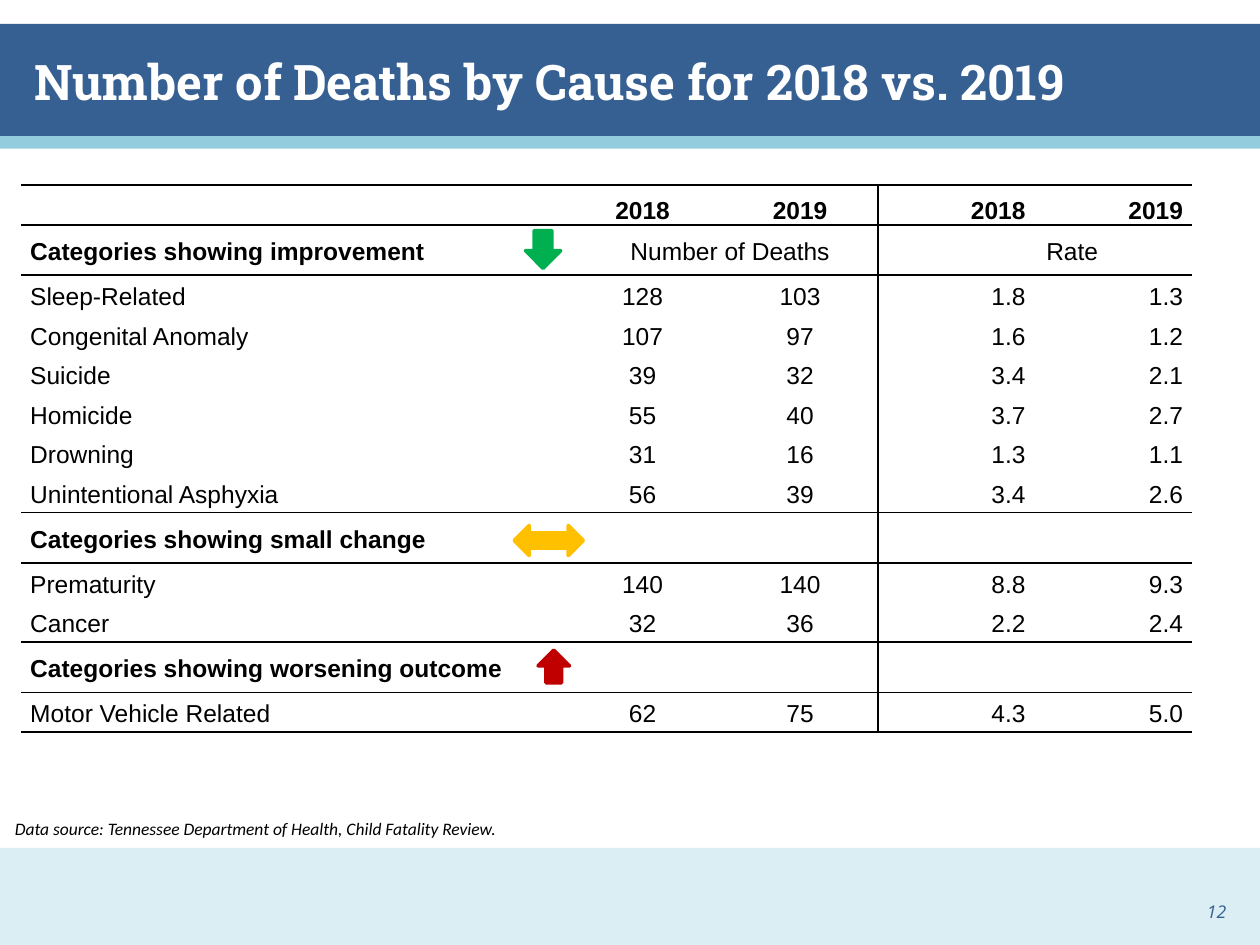
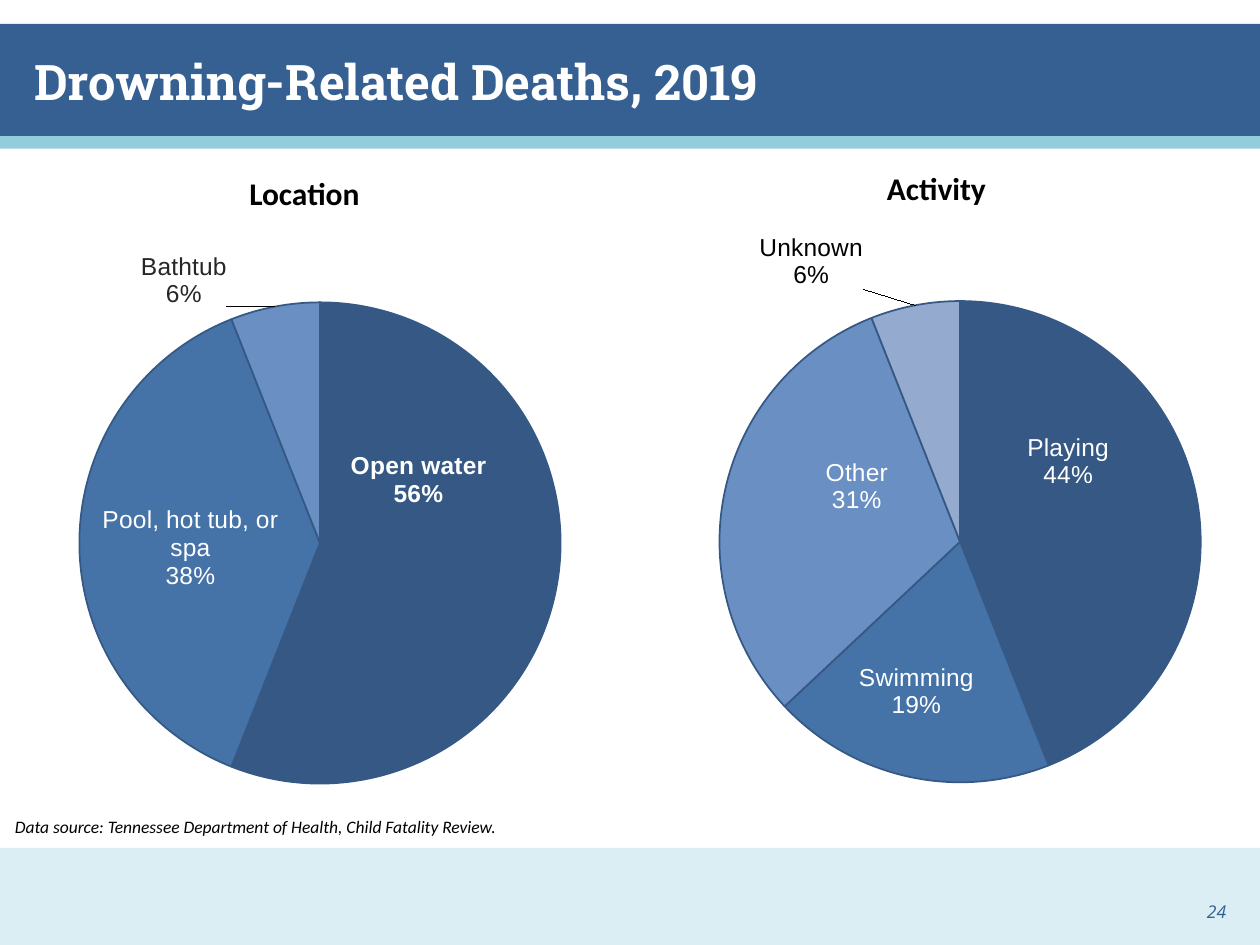
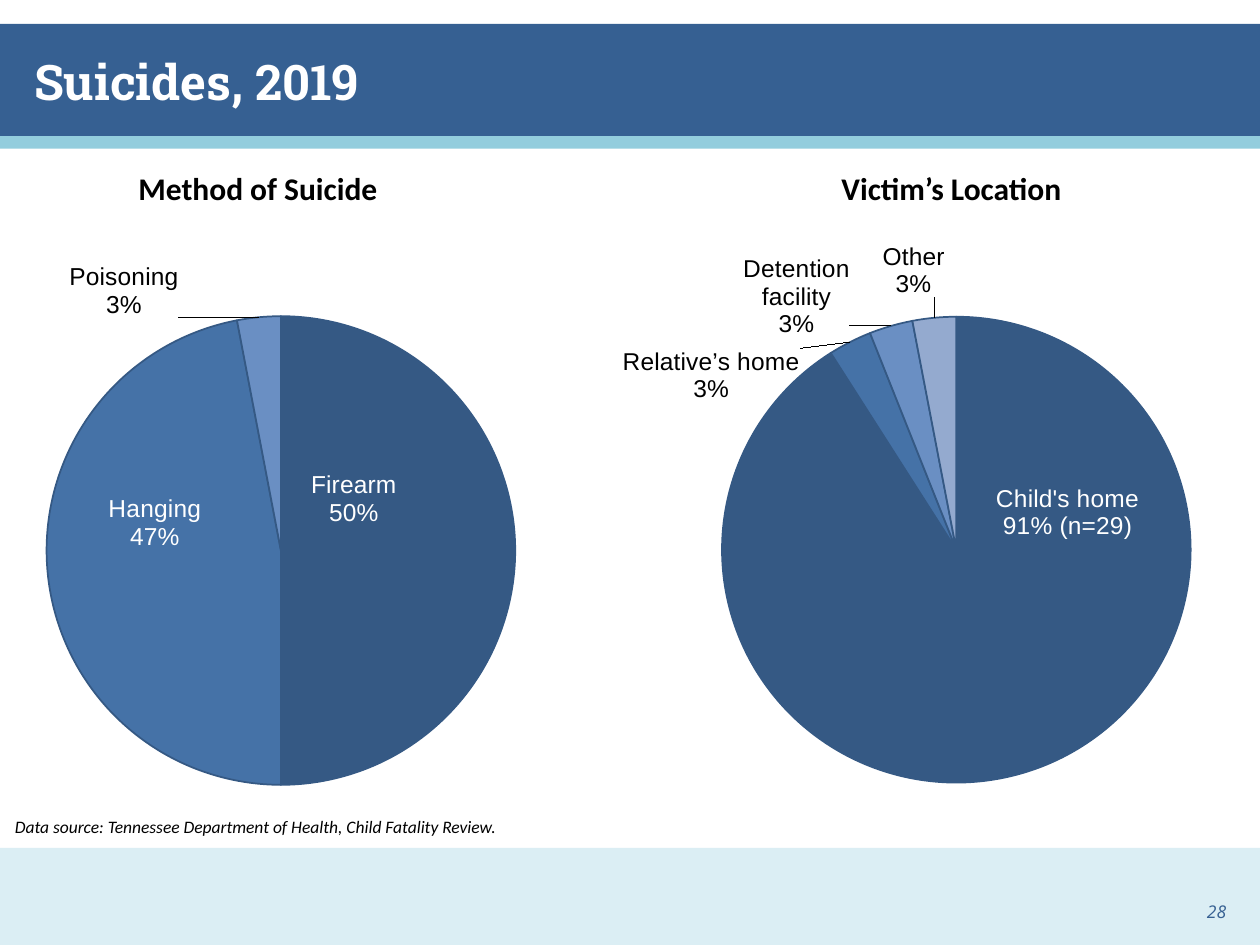
import pptx
import pptx.chart.data
import pptx.dml.color
import pptx.enum.chart
import pptx.enum.shapes
import pptx.enum.text
import pptx.oxml
import pptx.oxml.ns
import pptx.util
from lxml import etree

Inches = pptx.util.Inches
Pt = pptx.util.Pt
ALIGN = pptx.enum.text.PP_ALIGN
ANCHOR = pptx.enum.text.MSO_ANCHOR
SHAPE = pptx.enum.shapes.MSO_SHAPE
qn = pptx.oxml.ns.qn

BLUE, AQUA, PALE = "366092", "93CDDD", "DBEEF4"
WHITE, BLACK, CHARCOAL = "FFFFFF", "000000", "262626"
SLICES = ["355984", "4572A7", "6A8FC3", "94AACF"]
SOURCE = "Data source: Tennessee Department of Health, Child Fatality Review."

TITLE = dict(name="Roboto Slab", size=Pt(28), bold=True, color=WHITE)
HEADING = dict(name="Calibri", size=Pt(18), bold=True, color=BLACK)
NOTE = dict(name="Calibri", size=Pt(10), italic=True, color=BLACK)
NUMBER = dict(name="Open Sans", size=Pt(10), italic=True, color=BLUE)
CELL = dict(name="Arial", size=Pt(14), bold=False, color=BLACK)
STRONG = dict(CELL, bold=True)
INSIDE = dict(CELL, color=WHITE)
INSIDE_STRONG = dict(INSIDE, bold=True)
SOFT = dict(CELL, color=CHARCOAL)

NO_STYLE = "{2D5ABB26-0587-4C30-8999-92F81FD0307C}"
COLUMNS = [4.3, 1.26, 1.24, 1.24, 1.25]
ALIGNS = [ALIGN.LEFT, ALIGN.CENTER, ALIGN.CENTER, ALIGN.RIGHT, ALIGN.RIGHT]
TABLE_HEIGHT, CATEGORY_HEIGHT = 4.34, 0.4
HEADER_ROW, CATEGORY_ROWS = 0, (1, 8, 11)
DEATHS = [
    ["", "2018", "2019", "2018", "2019"],
    ["Categories showing improvement", "Number of Deaths", "", "Rate", ""],
    ["Sleep-Related", "128", "103", "1.8", "1.3"],
    ["Congenital Anomaly", "107", "97", "1.6", "1.2"],
    ["Suicide", "39", "32", "3.4", "2.1"],
    ["Homicide", "55", "40", "3.7", "2.7"],
    ["Drowning", "31", "16", "1.3", "1.1"],
    ["Unintentional Asphyxia", "56", "39", "3.4", "2.6"],
    ["Categories showing small change", "", "", "", ""],
    ["Prematurity", "140", "140", "8.8", "9.3"],
    ["Cancer", "32", "36", "2.2", "2.4"],
    ["Categories showing worsening outcome", "", "", "", ""],
    ["Motor Vehicle Related", "62", "75", "4.3", "5.0"],
]


def rgb(value):
    return pptx.dml.color.RGBColor.from_string(value)


def format_font(font, style):
    for key, value in style.items():
        if key == "color":
            font.color.rgb = rgb(value)
        else:
            setattr(font, key, value)


def write(frame, text, style, align=ALIGN.LEFT):
    frame.text = text
    for para in frame.paragraphs:
        para.alignment = align
        for span in para.runs:
            format_font(span.font, style)


def add_text(page, place, text, style, align=ALIGN.LEFT, anchor=ANCHOR.TOP):
    frame = page.shapes.add_textbox(*map(Inches, place)).text_frame
    frame.word_wrap = True
    frame.vertical_anchor = anchor
    write(frame, text, style, align)


def add_block(page, kind, place, color, outline=None):
    """A plain filled shape; an outline has rounded corners."""
    block = page.shapes.add_shape(kind, *map(Inches, place))
    block.shadow.inherit = False
    block.fill.solid()
    block.fill.fore_color.rgb = rgb(color)
    if outline:
        block.line.color.rgb = rgb(color)
        block.line.width = Pt(outline)
        etree.SubElement(block.element.spPr.find(qn("a:ln")), qn("a:round"))
    else:
        block.line.fill.background()
    return block


def add_bands(layout, page):
    """Draw the bands once and move them to the back of the shared layout."""
    bands = [(0.19, 0.89, BLUE), (1.08, 0.1, AQUA), (6.73, 0.77, PALE)]
    for index, (top, height, color) in enumerate(bands):
        band = add_block(page, SHAPE.RECTANGLE, (0, top, 10, height), color)
        layout.shapes.element.insert(2 + index, band.element)


def add_page(deck, layout, title, number, note_top=6.43):
    page = deck.slides.add_slide(layout)
    head = page.shapes.title
    head.left, head.top, head.width, head.height = map(Inches, (0.17, 0.19, 9.67, 0.9))
    head.text_frame.vertical_anchor = ANCHOR.MIDDLE
    head.text_frame.auto_size = pptx.enum.text.MSO_AUTO_SIZE.NONE
    write(head.text_frame, title, TITLE)
    add_text(page, (7.5, 6.97, 2.33, 0.4), number, NUMBER, ALIGN.RIGHT, ANCHOR.BOTTOM)
    add_text(page, (0.02, note_top, 6.98, 0.27), SOURCE, NOTE)
    return page


# Table

def add_border(cell, side, shown):
    line = etree.SubElement(cell._tc.get_or_add_tcPr(), qn("a:" + side), w=str(Pt(1)))
    if shown:
        fill = etree.SubElement(line, qn("a:solidFill"))
        etree.SubElement(fill, qn("a:srgbClr"), val=BLACK)
    else:
        etree.SubElement(line, qn("a:noFill"))


def format_cell(cell, row, column):
    ruled = (HEADER_ROW,) + CATEGORY_ROWS
    last = len(DEATHS) - 1
    sides = {
        "lnL": column == 3,
        "lnR": column == 2 or row == 1 and column == 1,
        "lnT": row in ruled or row - 1 in ruled,
        "lnB": row in ruled or row + 1 in ruled or row == last,
    }
    for side, shown in sides.items():
        add_border(cell, side, shown)
    cell.fill.background()
    cell.margin_left = cell.margin_right = Inches(0.07)
    cell.margin_top = cell.margin_bottom = 0
    cell.vertical_anchor = ANCHOR.BOTTOM if row == HEADER_ROW else ANCHOR.MIDDLE


def add_deaths_table(page):
    place = map(Inches, (0.17, 1.47, sum(COLUMNS), TABLE_HEIGHT))
    holder = page.shapes.add_table(len(DEATHS), len(COLUMNS), *place)
    table = holder.table
    table.first_row = table.horz_banding = False
    holder.element.find(".//" + qn("a:tableStyleId")).text = NO_STYLE
    for column, width in zip(table.columns, COLUMNS):
        column.width = Inches(width)
    categories = len(CATEGORY_ROWS)
    plain_height = (TABLE_HEIGHT - categories * CATEGORY_HEIGHT) / (len(DEATHS) - categories)
    for row, texts in enumerate(DEATHS):
        category = row in CATEGORY_ROWS
        table.rows[row].height = Inches(CATEGORY_HEIGHT if category else plain_height)
        for column, text in enumerate(texts):
            cell = table.cell(row, column)
            format_cell(cell, row, column)
            if text:
                strong = row == HEADER_ROW or category and column == 0
                align = ALIGN.CENTER if category and column else ALIGNS[column]
                write(cell.text_frame, text, STRONG if strong else CELL, align)
                cell.text_frame.paragraphs[0].line_spacing = 1.15
    # Unit labels span two columns each and sit right of centre
    for column, margin in ((1, 0.22), (3, 0.66)):
        unit = table.cell(1, column)
        unit.merge(table.cell(1, column + 1))
        unit.margin_left = Inches(margin)


# Pie charts

def manual_layout(x, y, size=None):
    layout = etree.Element(qn("c:layout"))
    manual = etree.SubElement(layout, qn("c:manualLayout"))
    values = {"x": x, "y": y}
    if size:
        values = {"layoutTarget": "inner", "xMode": "edge", "yMode": "edge",
                  **values, "w": size[0], "h": size[1]}
    for name, value in values.items():
        text = value if isinstance(value, str) else f"{value:.4f}"
        etree.SubElement(manual, qn("c:" + name), val=text)
    return layout


def add_pie(page, left, top, center, radius, slices):
    """Slices are (value, label, style, label shift in inches)."""
    width, height = 7.17, 5
    data = pptx.chart.data.CategoryChartData()
    data.categories = [str(index + 1) for index in range(len(slices))]
    data.add_series("Series 1", [part[0] for part in slices])
    chart = page.shapes.add_chart(
        pptx.enum.chart.XL_CHART_TYPE.PIE,
        *map(Inches, (left, top, width, height)), data).chart
    chart.has_legend = chart.has_title = False
    format_font(chart.font, dict(name="Calibri", size=Pt(10), color=BLACK))

    # The circle's bounding square as shares of the frame
    area = chart._chartSpace.find(".//" + qn("c:plotArea"))
    for old in area.findall(qn("c:layout")):
        area.remove(old)
    area.insert(0, manual_layout((center[0] - radius - left) / width,
                                 (center[1] - radius - top) / height,
                                 (2 * radius / width, 2 * radius / height)))

    plot = chart.plots[0]
    plot.vary_by_categories = True
    series = plot.series[0]
    for index, (_, text, style, shift) in enumerate(slices):
        point = series.points[index]
        point.format.fill.solid()
        point.format.fill.fore_color.rgb = rgb(SLICES[index])
        point.format.line.color.rgb = rgb(SLICES[0])
        point.format.line.width = Pt(1)
        label = point.data_label
        write(label.text_frame, text, style, ALIGN.CENTER)
        label.position = pptx.enum.chart.XL_LABEL_POSITION.BEST_FIT
        element = label._dLbl
        element.insert(1, manual_layout(shift[0] / width, shift[1] / height))


def main():
    deck = pptx.Presentation()
    deck.slide_width, deck.slide_height = Inches(10), Inches(7.5)
    layout = deck.slide_layouts[5]

    # Deaths by cause
    page = add_page(deck, layout, "Number of Deaths by Cause for 2018 vs. 2019", "12", 6.44)
    add_bands(layout, page)
    add_deaths_table(page)
    add_block(page, SHAPE.DOWN_ARROW, (4.17, 1.83, 0.28, 0.3), "00B050", 2)
    add_block(page, SHAPE.LEFT_RIGHT_ARROW, (4.08, 4.17, 0.55, 0.24), "FFC000", 2)
    add_block(page, SHAPE.UP_ARROW, (4.27, 5.16, 0.25, 0.26), "C00000", 2)

    # Drowning
    page = add_page(deck, layout, "Drowning-Related Deaths, 2019", "24")
    add_text(page, (1.88, 1.33, 1.25, 0.4), "Location", HEADING)
    add_text(page, (6.94, 1.29, 1.25, 0.4), "Activity", HEADING)
    add_pie(page, -1.08, 1.7, (2.54, 4.31), 1.91, [
        (56, "Open water\n56%", INSIDE_STRONG, (-1.69, -1.09)),
        (38, "Pool, hot tub, or spa\n38%", INSIDE, (1.64, 0.04)),
        (6, "Bathtub\n6%", SOFT, (-0.37, 0.07)),
    ])
    add_pie(page, 3.75, 1.85, (7.62, 4.3), 1.91, [
        (44, "Playing\n44%", INSIDE, (-1.4, -0.05)),
        (19, "Swimming\n19%", INSIDE, (0.54, -0.95)),
        (31, "Other\n31%", INSIDE, (1.35, 0.21)),
        (6, "Unknown\n6%", CELL, (-0.4, -0.07)),
    ])

    # Suicides
    page = add_page(deck, layout, "Suicides, 2019", "28")
    add_text(page, (1, 1.29, 2.42, 0.4), "Method of Suicide", HEADING)
    add_text(page, (6.58, 1.29, 2.58, 0.4), "Victim’s Location", HEADING)
    add_pie(page, -0.59, 1.56, (2.23, 4.37), 1.86, [
        (50, "Firearm\n50%", INSIDE, (-1.68, -0.41)),
        (47, "Hanging\n47%", INSIDE, (1.28, -0.62)),
        (3, "Poisoning\n3%", CELL, (-0.63, 0.07)),
    ])
    add_pie(page, 3.42, 1.63, (7.59, 4.38), 1.86, [
        (91, "Child's home\n91% (n=29)", INSIDE, (-0.22, -2.36)),
        (3, "Relative’s home\n3%", CELL, (-0.37, 0.54)),
        (3, "Detention facility\n3%", CELL, (-0.31, 0.15)),
        (3, "Other\n3%", CELL, (0.09, -0.1)),
    ])
    deck.save("out.pptx")


if __name__ == "__main__":
    main()
